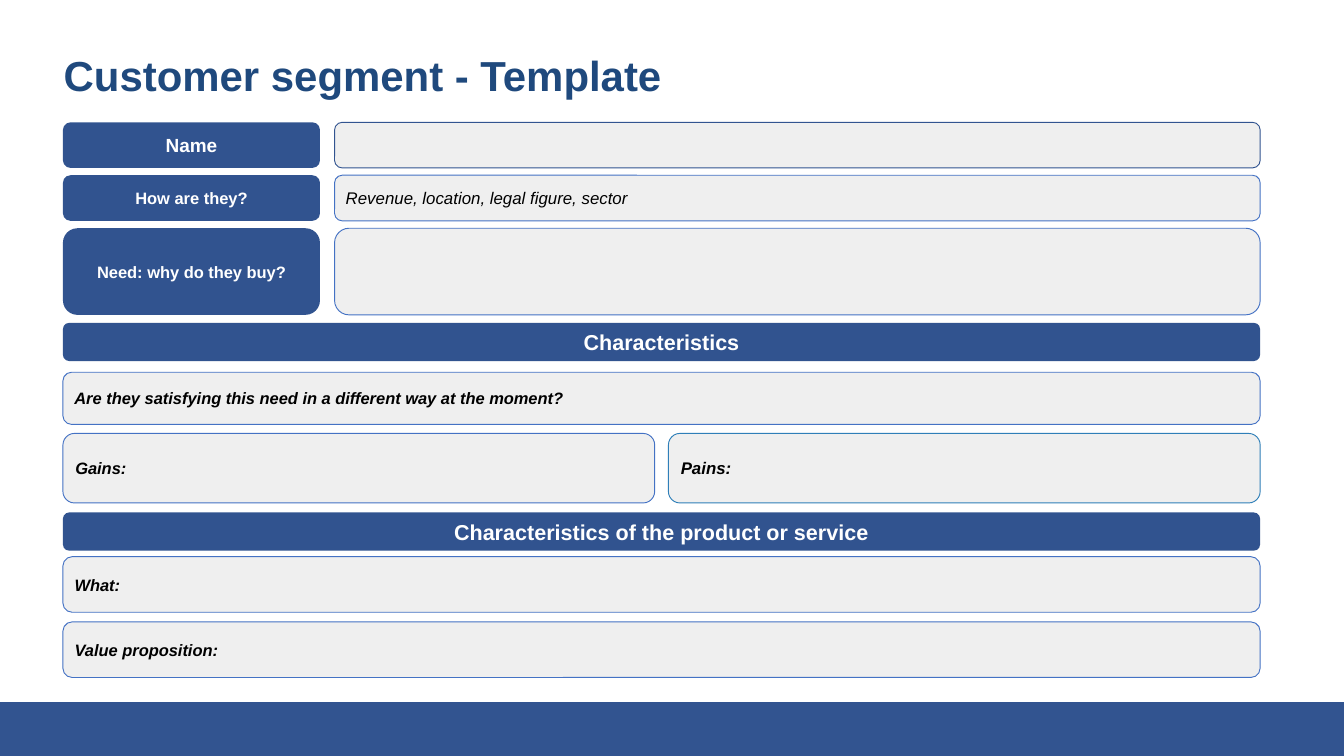
from pptx import Presentation
from pptx.dml.color import RGBColor
from pptx.enum.shapes import MSO_SHAPE as Shape
from pptx.enum.text import MSO_ANCHOR as Anchor, MSO_AUTO_SIZE as AutoSize, PP_ALIGN as Align
from pptx.util import Pt

COLORS = {"bar": "325490", "label": "31538F", "field": "EFEFEF", "edge": "4472C4",
          "pains": "2F7FB8", "title": "1F497D", "white": "FFFFFF", "black": "000000"}
SLIDE_W, SLIDE_H = 1061.3, 596.9
LEFT, RIGHT = 49.7, 995.1
FULL_W = RIGHT - LEFT
LABEL_W = 203
VALUE_LEFT = 264.2
HALF_W = 467.3


class SegmentSlide:
    """Draws the parts of the segment form on one slide in a shared style."""

    def __init__(self, deck):
        self.slide = deck.slides.add_slide(deck.slide_layouts[5])
        self.font = "Arial"

    def add_words(self, frame, text, size, color, align, bold=True, italic=False):
        paragraph = frame.paragraphs[0]
        paragraph.alignment = align
        run = paragraph.add_run()
        run.text = text
        run.font.name = self.font
        run.font.size = Pt(size)
        run.font.bold = bold
        run.font.italic = italic
        run.font.color.rgb = RGBColor.from_string(COLORS[color])

    def title(self, text):
        heading = self.slide.shapes.title
        heading.left, heading.top, heading.width, heading.height = Pt(50.3), Pt(46.8), Pt(816), Pt(31)
        frame = heading.text_frame
        frame.margin_left = frame.margin_right = frame.margin_top = frame.margin_bottom = 0
        frame.vertical_anchor = Anchor.TOP
        frame.auto_size = AutoSize.NONE
        frame.word_wrap = True
        frame.paragraphs[0].line_spacing = 0.8
        self.add_words(frame, text, 33.1, "title", Align.LEFT)

    def panel(self, left, top, width, height, fill, edge=None, kind=Shape.ROUNDED_RECTANGLE):
        panel = self.slide.shapes.add_shape(kind, Pt(left), Pt(top), Pt(width), Pt(height))
        panel.shadow.inherit = False
        panel.fill.solid()
        panel.fill.fore_color.rgb = RGBColor.from_string(COLORS[fill])
        if edge:
            panel.line.color.rgb = RGBColor.from_string(COLORS[edge])
            panel.line.width = Pt(0.75)
        else:
            panel.line.fill.background()
        frame = panel.text_frame
        frame.word_wrap = True
        frame.vertical_anchor = Anchor.MIDDLE
        return frame

    def label(self, top, height, text, size, width=LABEL_W):
        frame = self.panel(LEFT, top, width, height, "label")
        self.add_words(frame, text, size, "white", Align.CENTER)

    def field(self, left, top, width, height, text="", size=13, bold=True, edge="edge"):
        frame = self.panel(left, top, width, height, "field", edge)
        if text:
            self.add_words(frame, text, size, "black", Align.LEFT, bold, italic=True)

    def footer(self):
        self.panel(0, 554.4, SLIDE_W, SLIDE_H - 554.4, "bar", kind=Shape.RECTANGLE)


def main():
    deck = Presentation()
    deck.slide_width, deck.slide_height = Pt(SLIDE_W), Pt(SLIDE_H)
    form = SegmentSlide(deck)
    form.footer()
    form.title("Customer segment - Template")

    profile = [
        (96.6, 36, "Name", 15, "", "bar"),
        (138.4, 36, "How are they?", 13, "Revenue, location, legal figure, sector", "edge"),
        (180.2, 68.4, "Need: why do they buy?", 13, "", "edge"),
    ]
    for top, height, question, size, answer, edge in profile:
        form.label(top, height, question, size)
        form.field(VALUE_LEFT, top, RIGHT - VALUE_LEFT, height, answer, 13.3, False, edge)

    for top, section in [(254.9, "Characteristics"),
                         (404.6, "Characteristics of the product or service")]:
        form.label(top, 30.2, section, 17, FULL_W)

    for top, height, prompt in [
        (293.9, 41.2, "Are they satisfying this need in a different way at the moment?"),
        (439.5, 43.9, "What:"),
        (491, 43.9, "Value proposition:"),
    ]:
        form.field(LEFT, top, FULL_W, height, prompt)

    form.field(LEFT, 342.2, HALF_W, 54.9, "Gains:")
    form.field(RIGHT - HALF_W, 342.2, HALF_W, 54.9, "Pains:", 13.3, edge="pains")
    deck.save("out.pptx")


if __name__ == "__main__":
    main()
